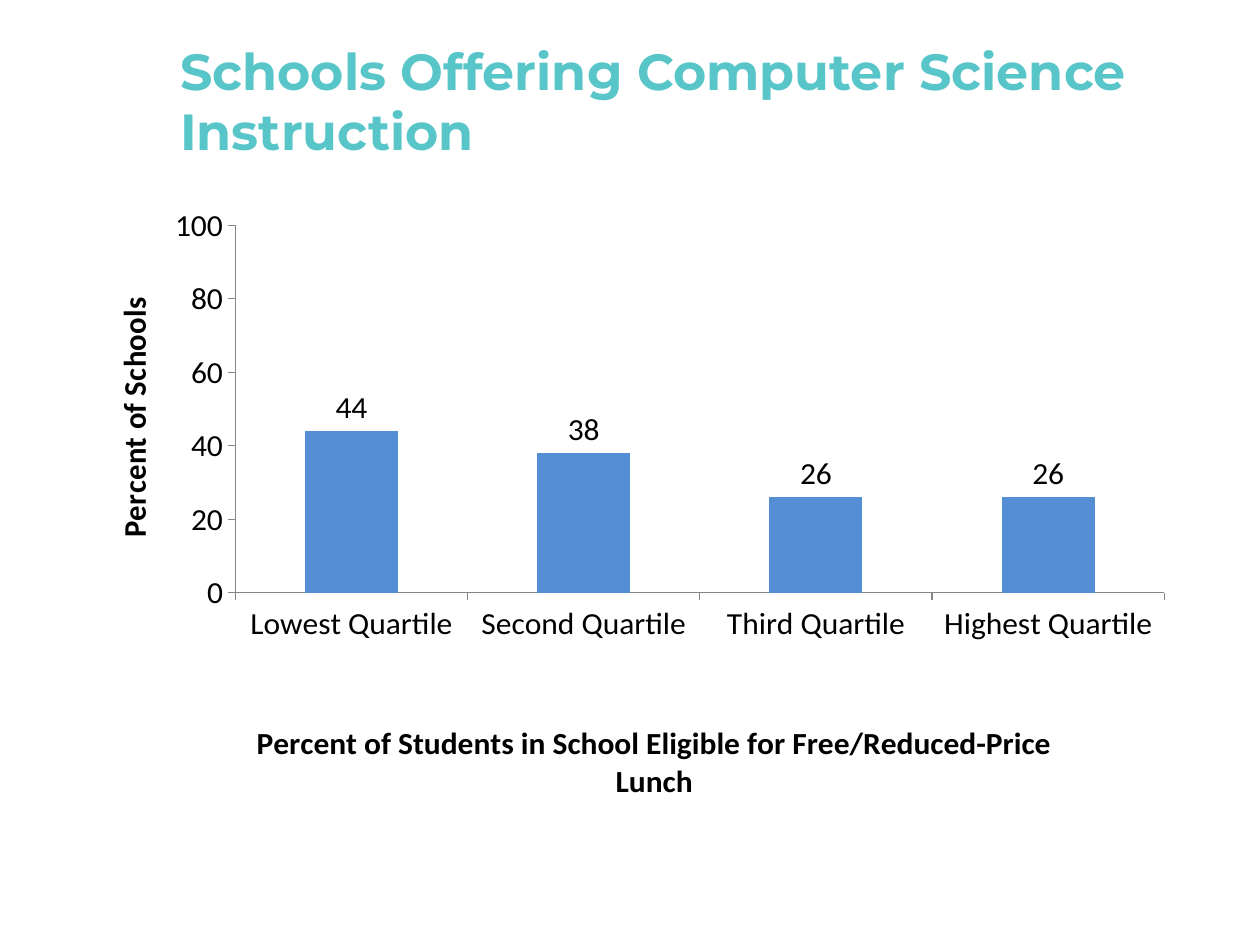
from pptx import Presentation
from pptx.chart.data import CategoryChartData
from pptx.dml.color import RGBColor
from pptx.enum.chart import XL_CHART_TYPE as ChartType
from pptx.enum.chart import XL_LABEL_POSITION as LabelPosition
from pptx.enum.chart import XL_TICK_MARK as TickMark
from pptx.enum.text import MSO_ANCHOR as Anchor
from pptx.enum.text import MSO_AUTO_SIZE as AutoSize
from pptx.enum.text import PP_ALIGN as Align
from pptx.oxml import parse_xml
from pptx.oxml.ns import nsdecls, qn
from pptx.util import Cm, Pt

COLORS = {"title": "58C5C9", "bar": "558ED5", "text": "000000", "axis": "868686"}
QUARTILES = {
    "Lowest Quartile": 44,
    "Second Quartile": 38,
    "Third Quartile": 26,
    "Highest Quartile": 26,
}


class SlideBuilder:
    """Holds the style and the current slide, and adds each kind of element."""

    def __init__(self, deck):
        self.slide = deck.slides.add_slide(deck.slide_layouts[5])
        self.title_font = {"name": "Montserrat", "size": Pt(29), "bold": True}
        self.chart_font = {"name": "Calibri", "size": Pt(18), "bold": False}
        self.label_font = {**self.chart_font, "bold": True}

    def color(self, name):
        return RGBColor.from_string(COLORS[name])

    def apply(self, target, values):
        for name, value in values.items():
            setattr(target, name, value)

    def style_font(self, font, values, color):
        self.apply(font, values)
        font.color.rgb = self.color(color)

    def place(self, element, **fractions):
        old = element.find(qn("c:layout"))
        if old is not None:
            element.remove(old)
        target = '<c:layoutTarget val="inner"/>' if "w" in fractions else ""
        modes = "".join(f'<c:{key}Mode val="edge"/>' for key in "xy")
        sizes = "".join(f'<c:{key} val="{value}"/>' for key, value in fractions.items())
        layout = parse_xml(
            f'<c:layout {nsdecls("c")}><c:manualLayout>{target}{modes}{sizes}'
            "</c:manualLayout></c:layout>"
        )
        text = element.find(qn("c:tx"))
        if text is None:
            element.insert(0, layout)
        else:
            text.addnext(layout)

    def add_title(self, text, left, top, width, height):
        title = self.slide.shapes.title
        self.apply(title, {"left": left, "top": top, "width": width, "height": height})
        frame = title.text_frame
        self.apply(frame, {
            "text": text,
            "word_wrap": True,
            "auto_size": AutoSize.NONE,
            "vertical_anchor": Anchor.MIDDLE,
        })
        para = frame.paragraphs[0]
        para.alignment = Align.LEFT
        self.style_font(para.runs[0].font, self.title_font, "title")

    def style_axis(self, axis, text, x, y):
        self.apply(axis, {
            "has_major_gridlines": False,
            "major_tick_mark": TickMark.OUTSIDE,
            "minor_tick_mark": TickMark.NONE,
        })
        axis.format.line.color.rgb = self.color("axis")
        axis.format.line.width = Pt(0.75)
        self.style_font(axis.tick_labels.font, self.chart_font, "text")
        title = axis.axis_title
        title.text_frame.text = text
        span = title.text_frame.paragraphs[0].runs[0]
        self.style_font(span.font, self.label_font, "text")
        self.place(title._element, x=x, y=y)

    def add_column_chart(self, values, left, top, width, height):
        data = CategoryChartData(number_format="General")
        data.categories = list(values)
        data.add_series("Series 1", list(values.values()))
        chart = self.slide.shapes.add_chart(
            ChartType.COLUMN_CLUSTERED, left, top, width, height, data
        ).chart
        self.apply(chart, {"has_title": False, "has_legend": False})
        self.style_font(chart.font, self.chart_font, "text")

        plot = chart.plots[0]
        self.apply(plot, {
            "gap_width": 150, "vary_by_categories": False, "has_data_labels": True,
        })
        self.apply(plot.data_labels, {
            "show_value": True, "position": LabelPosition.OUTSIDE_END,
        })
        self.style_font(plot.data_labels.font, self.chart_font, "text")
        fill = plot.series[0].format.fill
        fill.solid()
        fill.fore_color.rgb = self.color("bar")

        self.apply(chart.value_axis, {
            "minimum_scale": 0, "maximum_scale": 100, "major_unit": 20,
        })
        self.style_axis(chart.value_axis, "Percent of Schools", 0.03, 0.17)
        self.style_axis(
            chart.category_axis,
            "Percent of Students in School Eligible for Free/Reduced-Price Lunch",
            0.16, 0.87,
        )
        self.place(chart._chartSpace.chart.plotArea, x=0.146, y=0.05, w=0.835, h=0.614)


def main():
    deck = Presentation()
    deck.slide_width, deck.slide_height = Cm(25.4), Cm(19.05)
    page = SlideBuilder(deck)
    page.add_column_chart(QUARTILES, Cm(1.47), Cm(3.94), Cm(22.43), Cm(12.37))
    page.add_title(
        "Schools Offering Computer Science Instruction",
        Cm(3.38), Cm(0.43), Cm(21.16), Cm(3.18),
    )
    deck.save("out.pptx")


if __name__ == "__main__":
    main()
